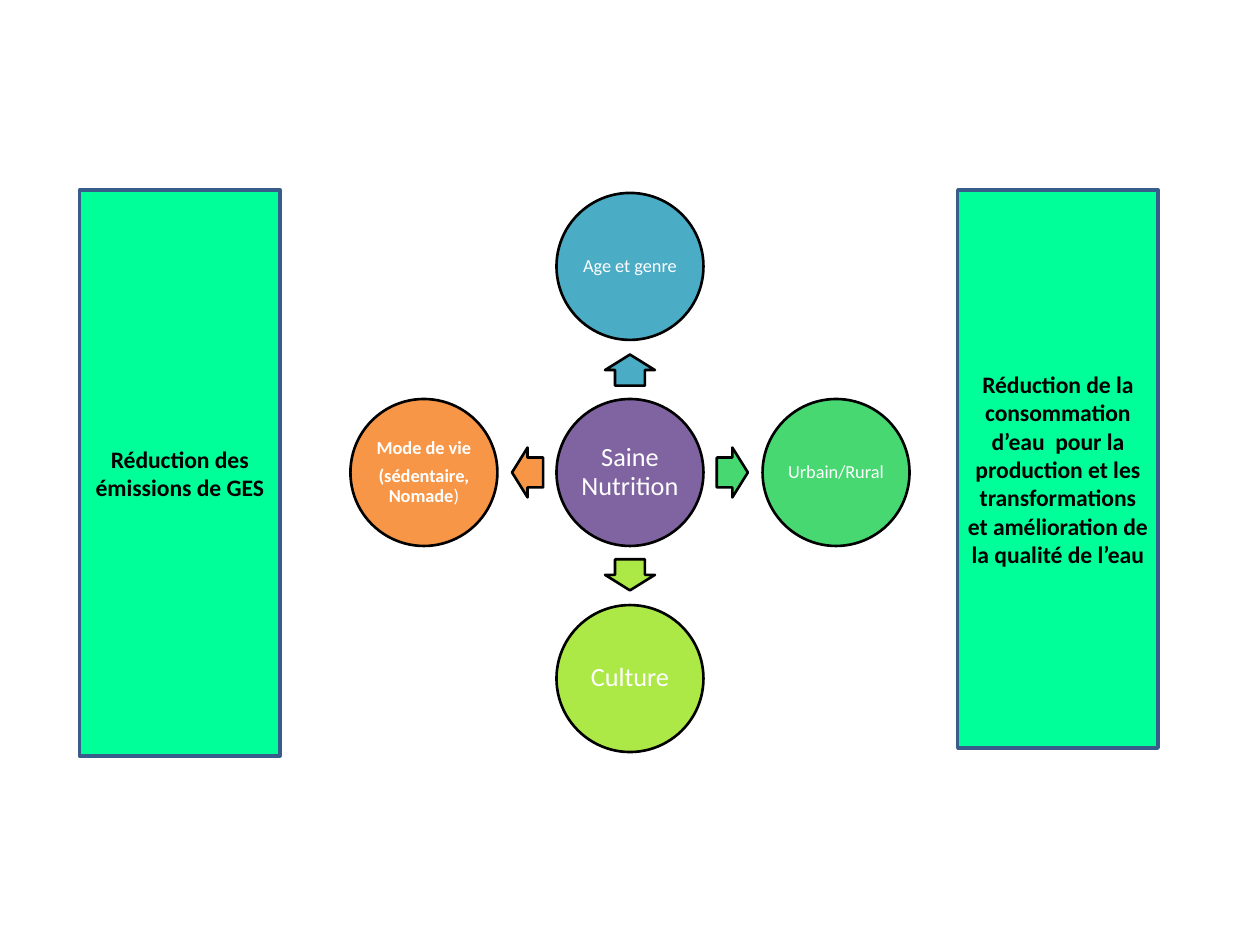
from pptx import Presentation
from pptx.dml.color import RGBColor
from pptx.enum import shapes, text
from pptx.util import Pt

BLACK = RGBColor(0, 0, 0)
WHITE = RGBColor(255, 255, 255)
PURPLE = RGBColor(0x80, 0x64, 0xA2)
TEAL = RGBColor(0x4B, 0xAC, 0xC6)
GREEN = RGBColor(0x47, 0xD8, 0x72)
LIME = RGBColor(0xAC, 0xE9, 0x46)
ORANGE = RGBColor(0xF7, 0x96, 0x46)
MINT = RGBColor(0x00, 0xFF, 0x99)
NAVY = RGBColor(0x38, 0x5D, 0x8A)
KIND = shapes.MSO_SHAPE

# Each paragraph is a list of (text, bold) runs.
HUB = [[("Saine Nutrition", False)]]
# paragraphs, colour, size, direction (x, y), arrow
SPOKES = [
    ([[("Age et genre", False)]], TEAL, 10.5, (0, -1), KIND.UP_ARROW),
    ([[("Urbain/Rural", False)]], GREEN, 10.5, (1, 0), KIND.RIGHT_ARROW),
    ([[("Culture", False)]], LIME, 15, (0, 1), KIND.DOWN_ARROW),
    ([[("Mode de vie", True)],
      [("(sédentaire, Nomade", True), (")", False)]],
     ORANGE, 10.5, (-1, 0), KIND.LEFT_ARROW),
]
# text, left, height
PANELS = [
    ("Réduction des émissions de GES", 45.5, 323.5),
    ("Réduction de la consommation d’eau  pour la production et les "
     "transformations et amélioration de la qualité de l’eau", 547.25, 319),
]

MID_X, MID_Y = 360, 270
DISC = 84
REACH = 117.75            # hub centre to spoke centre
GAP = 58.5                # hub centre to arrow centre
LONG, WIDE = 17.75, 28.5  # arrow length and width
TOP, PANEL = 108.5, 114.5

prs = Presentation()
prs.slide_width, prs.slide_height = Pt(720), Pt(540)
slide = prs.slides.add_slide(prs.slide_layouts[6])


def draw(kind, x, y, w, h, fill, line=BLACK, weight=1.5):
    shape = slide.shapes.add_shape(kind, Pt(x), Pt(y), Pt(w), Pt(h))
    shape.shadow.inherit = False
    shape.fill.solid()
    shape.fill.fore_color.rgb = fill
    shape.line.color.rgb = line
    shape.line.width = Pt(weight)
    return shape


def write(shape, paras, size, color=WHITE, inset=(1.4, 1.4),
          spacing=None, after=0):
    frame = shape.text_frame
    frame.word_wrap = True
    frame.vertical_anchor = text.MSO_ANCHOR.MIDDLE
    frame.margin_left = frame.margin_right = Pt(inset[0])
    frame.margin_top = frame.margin_bottom = Pt(inset[1])
    for i, runs in enumerate(paras):
        para = frame.add_paragraph() if i else frame.paragraphs[0]
        para.alignment = text.PP_ALIGN.CENTER
        para.line_spacing = spacing
        para.space_after = Pt(after)
        for words, bold in runs:
            run = para.add_run()
            run.text = words
            run.font.name = "Calibri"
            run.font.size = Pt(size)
            run.font.bold = bold
            run.font.color.rgb = color


def disc(x, y, paras, fill, size):
    """Draw a labelled circle centred on x, y."""
    shape = draw(KIND.OVAL, x - DISC / 2, y - DISC / 2, DISC, DISC, fill)
    write(shape, paras, size, spacing=0.9, after=6 if size == 15 else 4.5)


disc(MID_X, MID_Y, HUB, PURPLE, 15)
for paras, fill, size, (dx, dy), kind in SPOKES:
    w, h = (LONG, WIDE) if dx else (WIDE, LONG)
    arrow = draw(kind, MID_X + dx * GAP - w / 2, MID_Y + dy * GAP - h / 2,
                 w, h, fill)
    arrow.adjustments[0] = 0.6
    arrow.adjustments[1] = 0.5
    disc(MID_X + dx * REACH, MID_Y + dy * REACH, paras, fill, size)

for words, left, height in PANELS:
    panel = draw(KIND.RECTANGLE, left, TOP, PANEL, height, MINT, NAVY, 2)
    write(panel, [[(words, True)]], 13.5, color=BLACK, inset=(5.4, 2.7))

prs.save("out.pptx")
